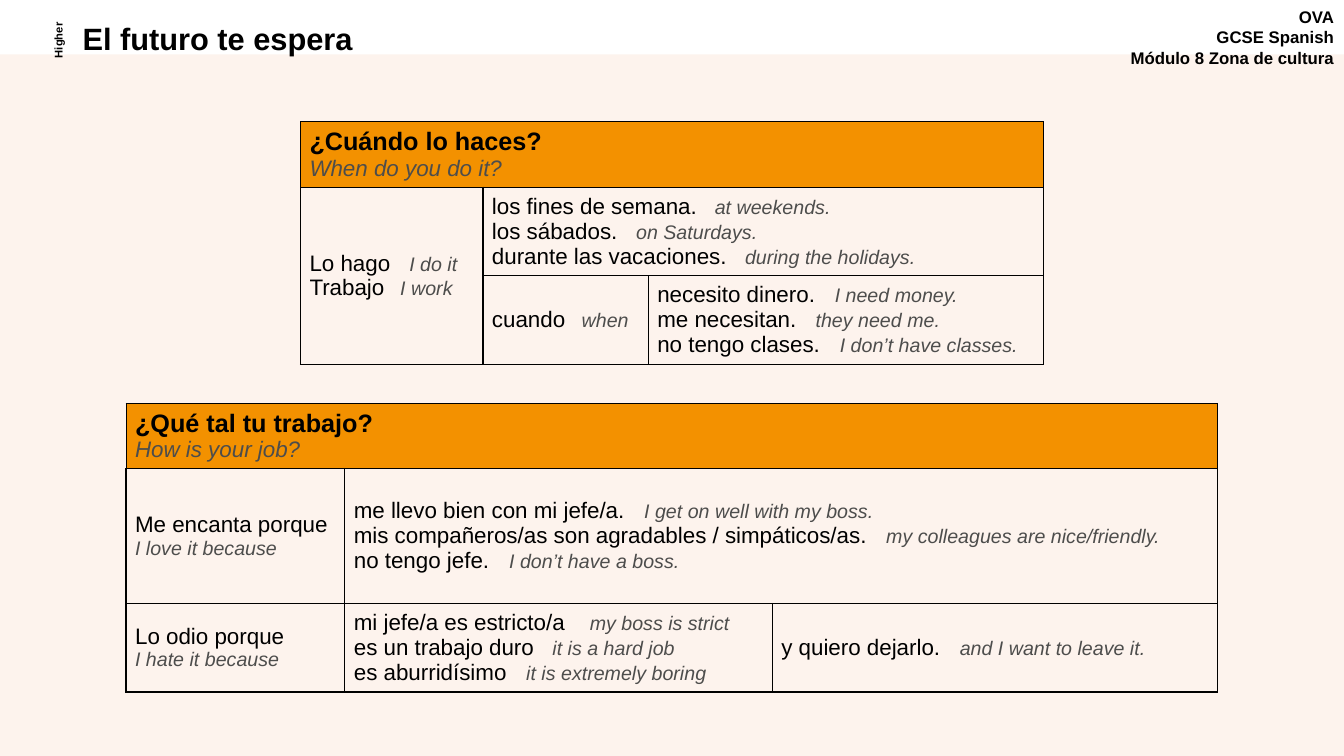
from lxml.etree import SubElement
from pptx import Presentation
from pptx.dml.color import RGBColor
from pptx.enum.shapes import MSO_SHAPE
from pptx.enum.text import MSO_ANCHOR, PP_ALIGN
from pptx.oxml.ns import qn
from pptx.util import Inches, Pt

HUES = {"ink": "000000", "gray": "4D4D4C", "head": "F39100", "page": "FDF3ED"}
FONT = "Arial"

# Each line: Spanish, English, tab stop in inches (None puts English below).
# Each cell: row, column, last row, last column, lines.
WHEN = [
    (0, 0, 0, 2, [("¿Cuándo lo haces?", "When do you do it?", None)]),
    (1, 0, 2, 0, [("Lo hago", "I do it", 0.99), ("Trabajo", "I work", 0.9)]),
    (1, 1, 1, 2, [("los fines de semana.", "at weekends.", 2.21),
                  ("los sábados.", "on Saturdays.", 1.43),
                  ("durante las vacaciones.", "during the holidays.", 2.51)]),
    (2, 1, 2, 1, [("cuando", "when", 0.89)]),
    (2, 2, 2, 2, [("necesito dinero.", "I need money.", 1.76),
                  ("me necesitan.", "they need me.", 1.57),
                  ("no tengo clases.", "I don’t have classes.", 1.81)]),
]
JOB = [
    (0, 0, 0, 2, [("¿Qué tal tu trabajo?", "How is your job?", None)]),
    (1, 0, 1, 0, [("Me encanta porque", "I love it because", None)]),
    (1, 1, 1, 2, [("me llevo bien con mi jefe/a.", "I get on well with my boss.", 2.88),
                  ("mis compañeros/as son agradables / simpáticos/as.",
                   "my colleagues are nice/friendly.", 5.28),
                  ("no tengo jefe.", "I don’t have a boss.", 1.54)]),
    (2, 0, 2, 0, [("Lo odio porque", "I hate it because", None)]),
    (2, 1, 2, 1, [("mi jefe/a es estricto/a", "my boss is strict", 2.34),
                  ("es un trabajo duro", "it is a hard job", 1.97),
                  ("es aburridísimo", "it is extremely boring", 1.71)]),
    (2, 2, 2, 2, [("y quiero dejarlo.", "and I want to leave it.", 1.77)]),
]


def color(name):
    return RGBColor.from_string(HUES[name])


def place(shape, box):
    shape.left, shape.top, shape.width, shape.height = map(Inches, box)


def add_run(para, text, size, hue="ink", bold=False, slant=False):
    run = para.add_run()
    run.text = text
    font = run.font
    font.name, font.size = FONT, Pt(size)
    font.bold, font.italic = bold, slant
    font.color.rgb = color(hue)


def add_para(frame):
    first = frame.paragraphs[0]
    return frame.add_paragraph() if first.runs else first


def add_label(slide, box, lines, size, align, turn=0):
    label = slide.shapes.add_textbox(*map(Inches, box))
    label.rotation = turn
    frame = label.text_frame
    frame.word_wrap = True
    for line in lines:
        para = add_para(frame)
        para.alignment = align
        add_run(para, line, size, bold=True)


# Page band, title and corner labels
def add_header(slide, box):
    left, top, width, height = box
    band = slide.shapes.add_shape(MSO_SHAPE.RECTANGLE, Inches(left), Inches(top + 0.54),
                                  Inches(width), Inches(height - 0.54))
    band.shadow.inherit = False
    band.fill.solid()
    band.fill.fore_color.rgb = color("page")
    band.line.fill.background()

    title = slide.shapes.title
    title.element.addprevious(band.element)
    place(title, (left + 0.72, top + 0.19, 8.53, 0.43))
    frame = title.text_frame
    frame.word_wrap = True
    frame.vertical_anchor = MSO_ANCHOR.TOP
    para = frame.paragraphs[0]
    para.alignment = PP_ALIGN.LEFT
    para.line_spacing = 0.9
    add_run(para, "El futuro te espera", 22, bold=True)

    add_label(slide, (left + width - 2.34, top + 0.02, 2.34, 0.77),
              ["OVA", "GCSE Spanish", "Módulo 8 Zona de cultura"], 12, PP_ALIGN.RIGHT)
    add_label(slide, (left + 0.18, top + 0.29, 0.78, 0.22), ["Higher"], 8,
              PP_ALIGN.CENTER, 270)


def add_edges(cell, width):
    props = cell._tc.get_or_add_tcPr()
    for side in ("lnL", "lnR", "lnT", "lnB"):
        edge = SubElement(props, qn(f"a:{side}"), w=str(Pt(width)))
        paint = SubElement(edge, qn("a:solidFill"))
        SubElement(paint, qn("a:srgbClr"), val=HUES["ink"])


def add_stop(para, stop):
    tabs = SubElement(para._p.get_or_add_pPr(), qn("a:tabLst"))
    SubElement(tabs, qn("a:tab"), pos=str(Inches(stop)), algn="l")


def fill_cell(cell, lines, head):
    cell.vertical_anchor = MSO_ANCHOR.MIDDLE
    cell.margin_left = cell.margin_right = Inches(0.09)
    cell.margin_top = cell.margin_bottom = Inches(0.04)
    big, small = (18, 16) if head else (16, 14)
    for spanish, english, stop in lines:
        para = add_para(cell.text_frame)
        if stop:
            add_stop(para, stop)
        add_run(para, spanish, big, bold=head)
        if stop:
            add_run(para, "\t", small)
        else:
            para = add_para(cell.text_frame)
        add_run(para, english, small, "gray", slant=True)


# Phrase table: orange heading row above merged cells
def add_phrases(slide, box, cols, rows, cells):
    table = slide.shapes.add_table(len(rows), len(cols), *map(Inches, box)).table
    table.first_row = table.horz_banding = False
    for col, width in zip(table.columns, cols):
        col.width = Inches(width)
    for row, height in zip(table.rows, rows):
        row.height = Inches(height)
    for r in range(len(rows)):
        for c in range(len(cols)):
            cell = table.cell(r, c)
            add_edges(cell, 1 if r else 0.75)
            if r:
                cell.fill.background()
            else:
                cell.fill.solid()
                cell.fill.fore_color.rgb = color("head")
    for top, left, low, right, lines in cells:
        cell = table.cell(top, left)
        if (top, left) != (low, right):
            cell.merge(table.cell(low, right))
        fill_cell(cell, lines, top == 0)


def main():
    deck = Presentation()
    deck.slide_width, deck.slide_height = Inches(13.33), Inches(7.5)
    slide = deck.slides.add_slide(deck.slide_layouts[5])
    add_header(slide, (0, 0, 13.33, 7.5))
    add_phrases(slide, (1.25, 4, 10.83, 2.78), (2.17, 4.24, 4.42), (0.62, 1.34, 0.82), JOB)
    add_phrases(slide, (2.98, 1.21, 7.37, 2.26), (1.81, 1.64, 3.92), (0.62, 0.82, 0.82), WHEN)
    deck.save("out.pptx")


if __name__ == "__main__":
    main()
